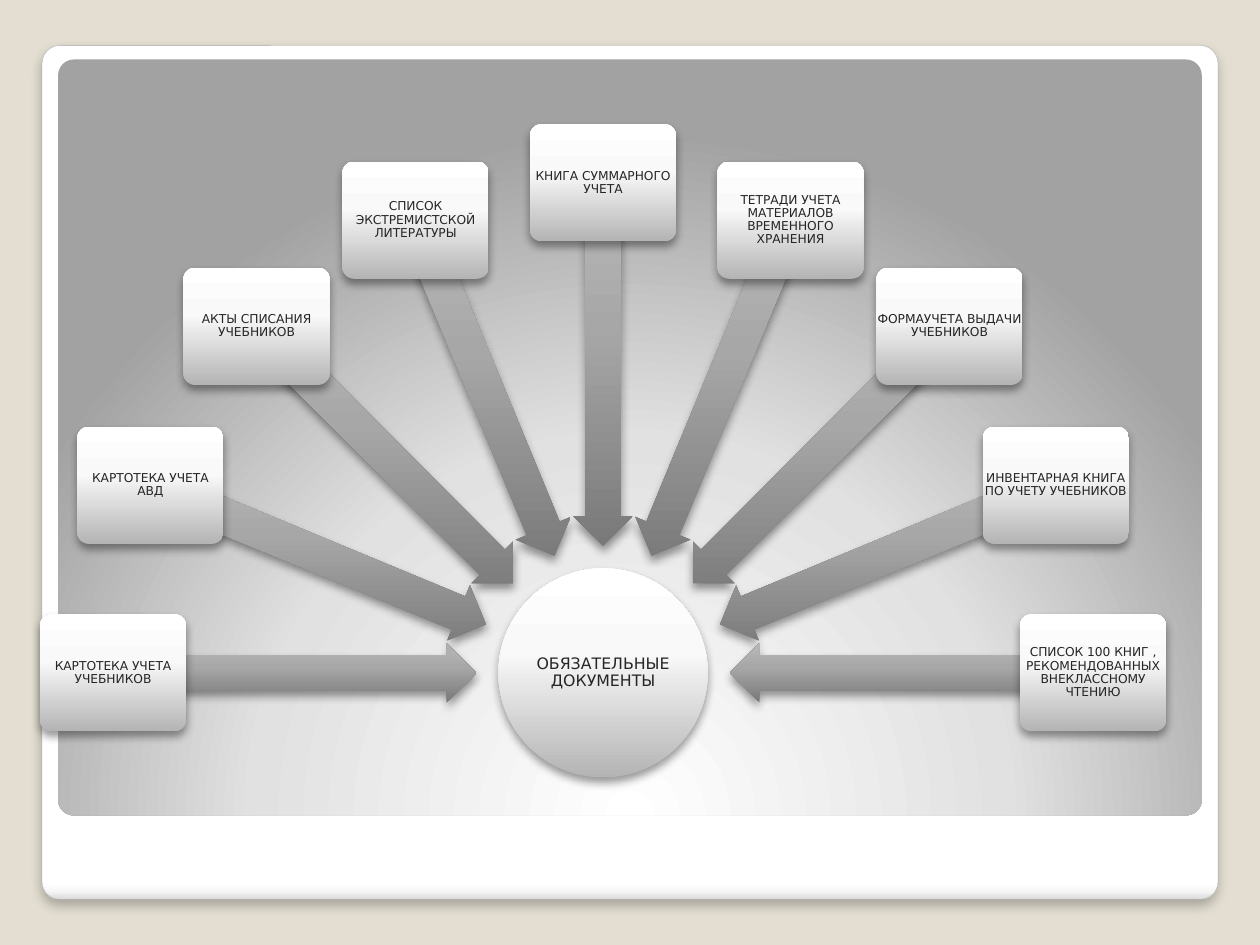
from math import cos, radians, sin

from lxml import etree
from pptx import Presentation
from pptx.dml.color import RGBColor
from pptx.enum.shapes import MSO_SHAPE
from pptx.enum.text import MSO_ANCHOR, PP_ALIGN
from pptx.oxml.ns import qn
from pptx.util import Pt

ROUNDED = MSO_SHAPE.ROUNDED_RECTANGLE
OVAL = MSO_SHAPE.OVAL
LEFT_ARROW = MSO_SHAPE.LEFT_ARROW
CENTER = PP_ALIGN.CENTER
MIDDLE = MSO_ANCHOR.MIDDLE

FONT = "DejaVu Sans"
COLORS = {
    "background": "E3DED1",
    "border": "A4A4A4",
    "text": "262626",
    "shadow": "000000",
}
FRAME_STOPS = [(0, "FFFFFF"), (98, "FFFFFF"), (99, "F7F7F7"), (100, "DADADA")]
PANEL_STOPS = [(0, "FFFFFF"), (55, "E1E1E1"), (100, "A2A2A2")]
CARD_STOPS = [(0, "B4B4B4"), (60, "F9F9F9"), (100, "FFFFFF")]
ARROW_STOPS = [(0, "797979"), (60, "A7A7A7"), (100, "B9B9B9")]

HUB_TEXT = "ОБЯЗАТЕЛЬНЫЕ ДОКУМЕНТЫ"
DOCUMENTS = [
    "КАРТОТЕКА УЧЕТА УЧЕБНИКОВ",
    "КАРТОТЕКА УЧЕТА АВД",
    "АКТЫ СПИСАНИЯ УЧЕБНИКОВ",
    "СПИСОК ЭКСТРЕМИСТСКОЙ ЛИТЕРАТУРЫ",
    "КНИГА СУММАРНОГО УЧЕТА",
    "ТЕТРАДИ УЧЕТА МАТЕРИАЛОВ ВРЕМЕННОГО ХРАНЕНИЯ",
    "ФОРМАУЧЕТА ВЫДАЧИ УЧЕБНИКОВ",
    "ИНВЕНТАРНАЯ КНИГА ПО УЧЕТУ УЧЕБНИКОВ",
    "СПИСОК 100 КНИГ , РЕКОМЕНДОВАННЫХ ВНЕКЛАССНОМУ ЧТЕНИЮ",
]


def add_child(parent, tag, **attributes):
    values = {name: str(value) for name, value in attributes.items()}
    return etree.SubElement(parent, qn(tag), values)


def set_gradient(shape, stops, angle=None, focus=None):
    shape.fill.background()
    properties = shape.fill._xPr
    gradient = add_child(properties, "a:gradFill", rotWithShape=0)
    properties.replace(properties.find(qn("a:noFill")), gradient)
    stop_list = add_child(gradient, "a:gsLst")
    for position, color in stops:
        stop = add_child(stop_list, "a:gs", pos=position * 1000)
        add_child(stop, "a:srgbClr", val=color)
    if focus:
        radial = add_child(gradient, "a:path", path="circle")
        edges = {edge: value * 1000 for edge, value in zip("ltrb", focus)}
        add_child(radial, "a:fillToRect", **edges)
    else:
        add_child(gradient, "a:lin", ang=angle * 60000, scaled=0)


def set_shadow(shape, opacity, blur, distance):
    effects = shape._element.spPr.find(qn("a:effectLst"))
    shadow = add_child(effects, "a:outerShdw", blurRad=Pt(blur), dist=Pt(distance),
                       dir=90 * 60000, algn="ctr", rotWithShape=0)
    color = add_child(shadow, "a:srgbClr", val=COLORS["shadow"])
    add_child(color, "a:alpha", val=opacity * 1000)


def add_shape(shapes, kind, box, adjustments=()):
    shape = shapes.add_shape(kind, *map(Pt, box))
    for index, value in enumerate(adjustments):
        shape.adjustments[index] = value
    shape.line.fill.background()
    shape.shadow.inherit = False
    return shape


def centered_box(x, y, width, height):
    return x - width / 2, y - height / 2, width, height


def add_label(shapes, box, text, size):
    frame = shapes.add_textbox(*map(Pt, box)).text_frame
    frame.word_wrap = True
    frame.vertical_anchor = MIDDLE
    frame.margin_left = frame.margin_right = Pt(0.7)
    frame.margin_top = frame.margin_bottom = Pt(0.7)
    paragraph = frame.paragraphs[0]
    paragraph.alignment = CENTER
    paragraph.line_spacing = 0.9
    run = paragraph.add_run()
    run.text = text
    run.font.size = Pt(size)
    run.font.name = FONT
    run.font.color.rgb = RGBColor.from_string(COLORS["text"])


def add_card(shapes, kind, box, text, size, adjustments=()):
    card = add_shape(shapes, kind, box, adjustments)
    set_gradient(card, CARD_STOPS, angle=270)
    set_shadow(card, 40, 5.2, 3)
    add_label(shapes, box, text, size)


def add_arrow(shapes, box, rotation):
    arrow = add_shape(shapes, LEFT_ARROW, box, (0.6, 0.5))
    arrow.rotation = rotation
    set_gradient(arrow, ARROW_STOPS, angle=270)
    set_shadow(arrow, 40, 5.2, 3)


def add_backdrop(shapes, box):
    left, top, width, height = box
    frame = add_shape(shapes, ROUNDED, box, (0.021,))
    set_gradient(frame, FRAME_STOPS, angle=90)
    frame.line.color.rgb = RGBColor.from_string(COLORS["border"])
    frame.line.width = Pt(0.16)
    set_shadow(frame, 25, 6, 4)
    panel_box = (left + 9.2, top + 8, width - 18.4, height - 56)
    panel = add_shape(shapes, ROUNDED, panel_box, (0.021,))
    set_gradient(panel, PANEL_STOPS, focus=(50, 175, 50, -75))


def add_radial_diagram(slide, box):
    left, top, width, height = box
    card_width, card_height, hub_size = 83.6, 67, 119.6
    radius = (width - card_width) / 2
    center_x = left + width / 2
    center_y = top + card_height / 2 + radius
    arrow_radius = radius * 0.63
    shapes = slide.shapes.add_group_shape().shapes
    hub_box = centered_box(center_x, center_y, hub_size, hub_size)
    add_card(shapes, OVAL, hub_box, HUB_TEXT, 9)
    step = 180 / (len(DOCUMENTS) - 1)
    for index, document in enumerate(DOCUMENTS):
        rotation = 180 + step * index
        across, down = cos(radians(rotation)), sin(radians(rotation))
        arrow_box = centered_box(center_x + arrow_radius * across,
                                 center_y + arrow_radius * down, 208, 34)
        card_box = centered_box(center_x + radius * across,
                                center_y + radius * down, card_width, card_height)
        add_arrow(shapes, arrow_box, rotation % 360)
        add_card(shapes, ROUNDED, card_box, document, 7, (0.1,))


def main():
    presentation = Presentation()
    presentation.slide_width, presentation.slide_height = Pt(720), Pt(540)
    slide = presentation.slides.add_slide(presentation.slide_layouts[6])
    slide.background.fill.solid()
    slide.background.fill.fore_color.rgb = RGBColor.from_string(COLORS["background"])
    add_backdrop(slide.shapes, (24, 26, 672, 488))
    add_radial_diagram(slide, (22.8, 71, 643.6, 373))
    presentation.save("out.pptx")


if __name__ == "__main__":
    main()
